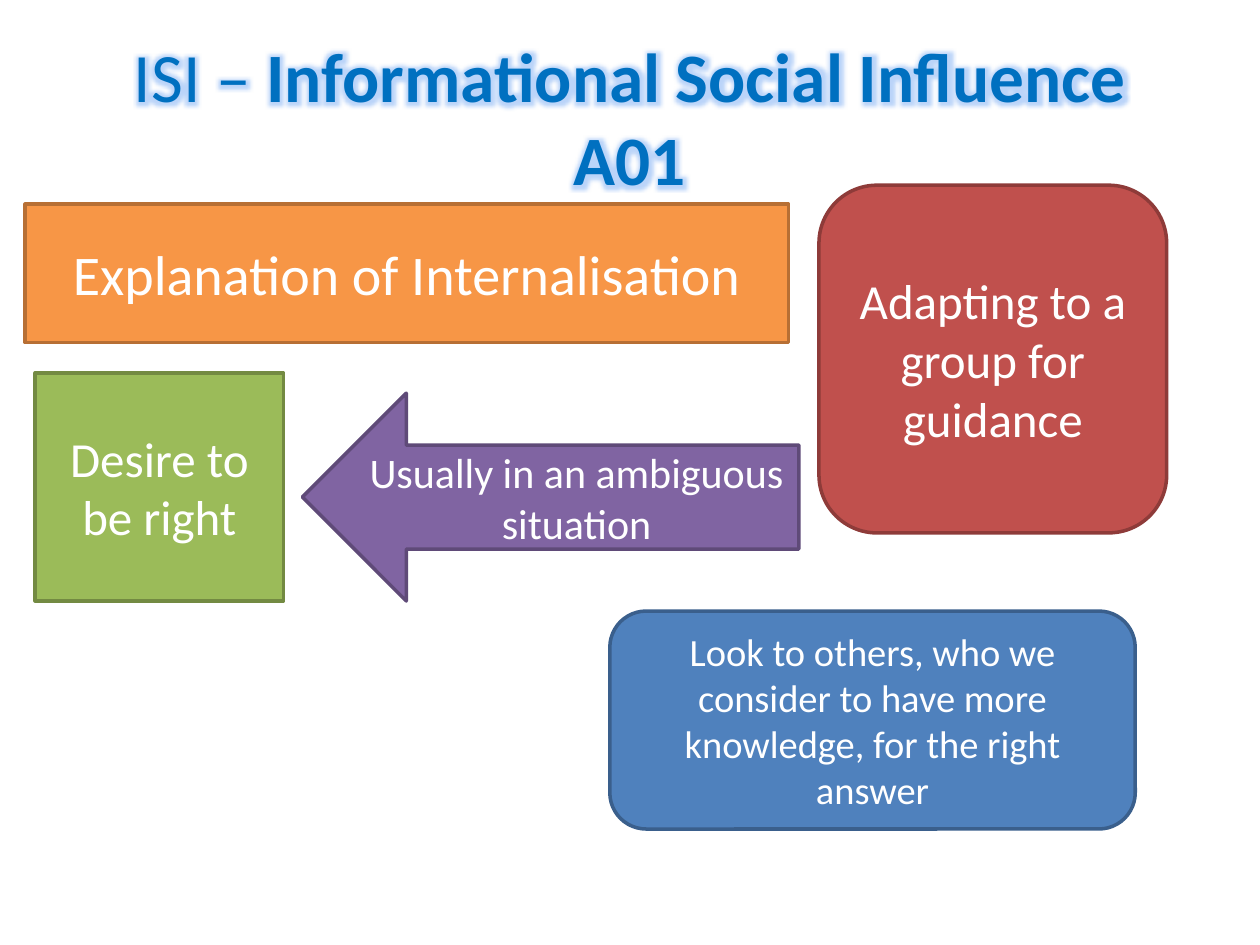
from lxml import etree
from pptx import Presentation
from pptx.dml.color import RGBColor
from pptx.enum.shapes import MSO_SHAPE as Shape
from pptx.enum.text import MSO_ANCHOR as Anchor, MSO_AUTO_SIZE as AutoSize, PP_ALIGN as Align
from pptx.oxml.ns import qn
from pptx.util import Inches, Pt

WIDTH, HEIGHT = 10, 7.5
FONT = "Calibri"
COLORS = {
    "title": "0070C0", "glow": "5595F0", "text": "FFFFFF",
    "orange": "F79646", "orange_line": "B76F34",
    "green": "9BBB59", "green_line": "738A42",
    "red": "C0504D", "red_line": "8E3B39",
    "purple": "8064A2", "purple_line": "5F4A78",
    "blue": "4F81BD", "blue_line": "3A5F8C",
}
CARDS = [
    (Shape.RECTANGLE, (0.2, 1.62, 6.06, 1.1), "orange", 32, "Explanation of Internalisation"),
    (Shape.RECTANGLE, (0.28, 2.96, 1.97, 1.81), "green", 28, "Desire to be right"),
    (Shape.ROUNDED_RECTANGLE, (6.5, 1.47, 2.76, 2.76), "red", 28,
     "Adapting to a group for guidance"),
    (Shape.LEFT_ARROW, (2.4, 3.12, 3.94, 1.65), "purple", 24,
     "Usually in an ambiguous situation"),
    (Shape.ROUNDED_RECTANGLE, (4.84, 4.85, 4.17, 1.73), "blue", 22,
     "Look to others, who we consider to have more knowledge, for the right answer"),
]


def color(name):
    return RGBColor.from_string(COLORS[name])


def style_paragraph(paragraph, size, color_name):
    paragraph.alignment = Align.CENTER
    paragraph.font.name = FONT
    paragraph.font.size = Pt(size)
    paragraph.font.color.rgb = color(color_name)


def add_glow(run, radius):
    effects = etree.SubElement(run.font._element, qn("a:effectLst"))
    glow = etree.SubElement(effects, qn("a:glow"), rad=str(Pt(radius)))
    tint = etree.SubElement(glow, qn("a:srgbClr"), val=COLORS["glow"])
    etree.SubElement(tint, qn("a:alpha"), val="40000")


def place_title(slide, box):
    title = slide.shapes.title
    title.left, title.top, title.width, title.height = map(Inches, box)
    frame = title.text_frame
    frame.auto_size = AutoSize.NONE
    frame.vertical_anchor = Anchor.MIDDLE
    paragraph = frame.paragraphs[0]
    for position, text in enumerate(["ISI – ", "Informational Social Influence", "A01"]):
        if position == 2:
            paragraph.add_line_break()
        run = paragraph.add_run()
        run.text = text
        run.font.bold = position > 0
        add_glow(run, 8)
    style_paragraph(paragraph, 39.6, "title")


def add_card(slide, kind, box, color_name, size, text):
    card = slide.shapes.add_shape(kind, *map(Inches, box))
    card.shadow.inherit = False
    card.fill.solid()
    card.fill.fore_color.rgb = color(color_name)
    card.line.color.rgb = color(f"{color_name}_line")
    card.line.width = Pt(2)
    frame = card.text_frame
    frame.word_wrap = True
    frame.vertical_anchor = Anchor.MIDDLE
    frame.text = text
    style_paragraph(frame.paragraphs[0], size, "text")


def main():
    presentation = Presentation()
    presentation.slide_width = Inches(WIDTH)
    presentation.slide_height = Inches(HEIGHT)
    slide = presentation.slides.add_slide(presentation.slide_layouts[5])
    place_title(slide, (WIDTH * 0.05, HEIGHT * 0.04, WIDTH * 0.9, HEIGHT / 6))
    for card in CARDS:
        add_card(slide, *card)
    presentation.save("out.pptx")


if __name__ == "__main__":
    main()
